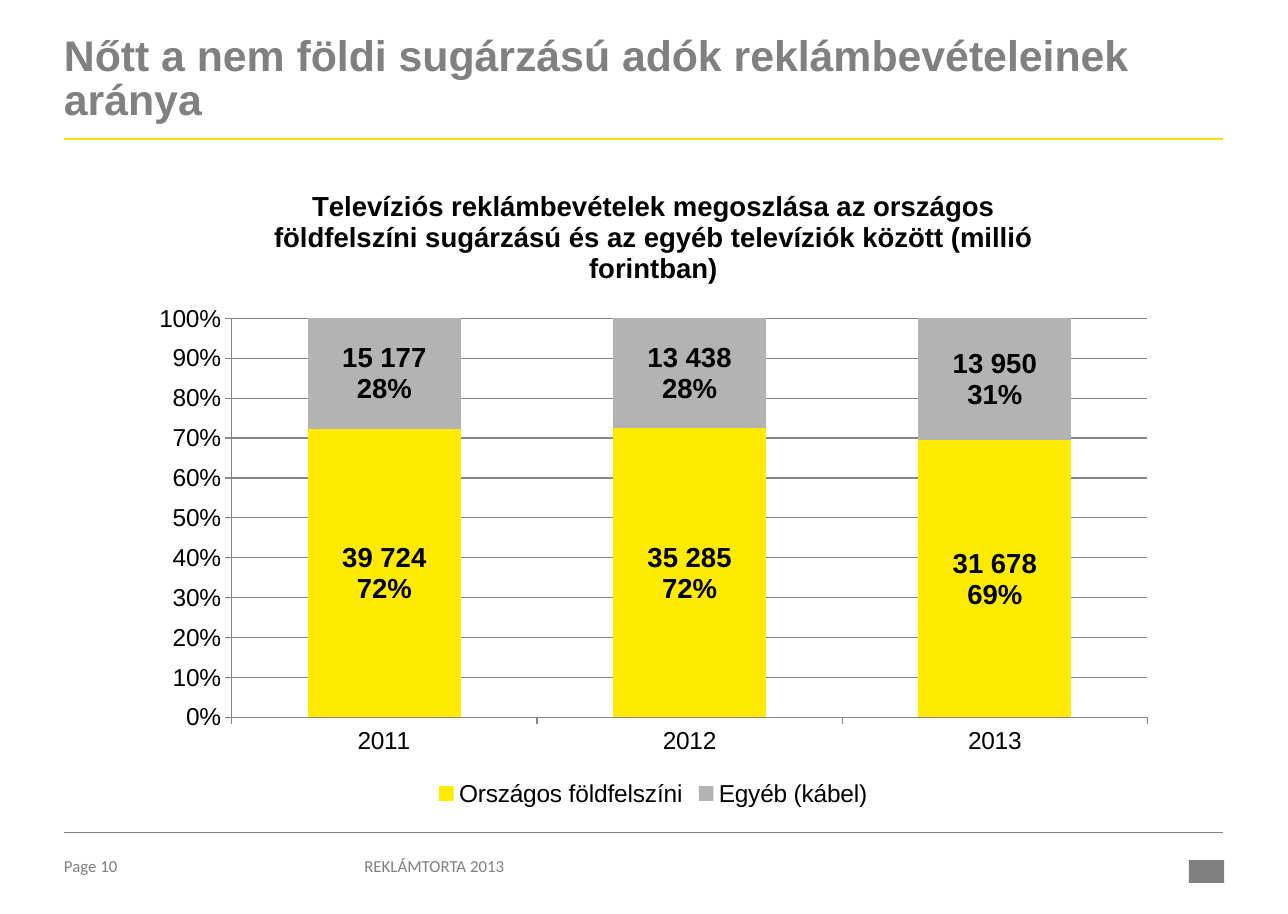
from lxml import etree
from pptx import Presentation
from pptx.chart.data import CategoryChartData
from pptx.dml.color import RGBColor
from pptx.enum.chart import XL_CHART_TYPE, XL_LABEL_POSITION, XL_LEGEND_POSITION, XL_TICK_MARK
from pptx.enum.shapes import MSO_CONNECTOR, MSO_SHAPE
from pptx.oxml.ns import qn
from pptx.util import Pt

STACKED = XL_CHART_TYPE.COLUMN_STACKED_100
CENTER = XL_LABEL_POSITION.CENTER
BOTTOM = XL_LEGEND_POSITION.BOTTOM
OUTSIDE = XL_TICK_MARK.OUTSIDE
STRAIGHT = MSO_CONNECTOR.STRAIGHT
RECTANGLE = MSO_SHAPE.RECTANGLE

COLORS = {"gray": "808080", "rule": "FFE600", "terrestrial": "FFEB00",
          "other": "B3B3B3", "grid": "868686", "black": "000000"}
LEFT, RIGHT = 41.8, 800
YEARS = ["2011", "2012", "2013"]
REVENUES = {
    "Országos földfelszíni": ("terrestrial", [39724, 35285, 31678]),
    "Egyéb (kábel)": ("other", [15177, 13438, 13950]),
}
CHART_TITLE = ("Televíziós reklámbevételek megoszlása az országos földfelszíni "
               "sugárzású és az egyéb televíziók között (millió forintban)")


def color(name):
    """Return the named colour."""
    return RGBColor.from_string(COLORS[name])


def style_font(font, size, name="Arial", ink="black", bold=False):
    """Set the face, size, colour and weight of a font."""
    font.name, font.size, font.bold = name, Pt(size), bold
    font.color.rgb = color(ink)


def add_span(para, text, size, **style):
    """Append one styled run to a paragraph."""
    span = para.add_run()
    span.text = text
    style_font(span.font, size, **style)


def add_text(page, place, text, size, spacing=None, **style):
    """Add a text box without margins."""
    box = page.shapes.add_textbox(*map(Pt, place))
    frame = box.text_frame
    frame.word_wrap = True
    frame.margin_left = frame.margin_right = frame.margin_top = frame.margin_bottom = 0
    para = frame.paragraphs[0]
    para.line_spacing = spacing
    add_span(para, text, size, ink="gray", **style)


def add_rule(page, top, ink, width):
    """Draw a horizontal rule between the page margins."""
    rule = page.shapes.add_connector(STRAIGHT, Pt(LEFT), Pt(top), Pt(RIGHT), Pt(top))
    rule.line.color.rgb = color(ink)
    rule.line.width = Pt(width)
    etree.SubElement(rule.element.spPr, qn("a:effectLst"))


def add_emblem(page, place):
    """Add the plain block in the footer corner."""
    block = page.shapes.add_shape(RECTANGLE, *map(Pt, place))
    block.shadow.inherit = False
    block.fill.solid()
    block.fill.fore_color.rgb = color("gray")
    block.line.fill.background()


def style_axis(axis):
    """Set the line, ticks and labels of an axis."""
    axis.major_tick_mark = OUTSIDE
    axis.format.line.color.rgb = color("grid")
    axis.format.line.width = Pt(0.75)
    style_font(axis.tick_labels.font, 16)


def label_points(series, values, totals):
    """Label each column part with its amount and its share."""
    labels = series.data_labels
    labels.show_value = True
    labels.position = CENTER
    style_font(labels.font, 18, bold=True)
    for index, (value, total) in enumerate(zip(values, totals)):
        label = series.points[index].data_label
        frame = label.text_frame
        amount = f"{value:,}".replace(",", " ")
        add_span(frame.paragraphs[0], amount, 18, bold=True)
        add_span(frame.add_paragraph(), f"{value / total:.0%}", 18, bold=True)
        label.position = CENTER


def add_revenue_chart(page, place):
    """Add the stacked chart of television advertising revenues."""
    data = CategoryChartData(number_format="#,##0")
    data.categories = YEARS
    for name, (_, values) in REVENUES.items():
        data.add_series(name, values)
    chart = page.shapes.add_chart(STACKED, *map(Pt, place), data).chart
    style_font(chart.font, 18)
    chart.has_title = True
    add_span(chart.chart_title.text_frame.paragraphs[0], CHART_TITLE, 18, bold=True)
    chart.has_legend = True
    chart.legend.position = BOTTOM
    chart.legend.include_in_layout = False
    style_font(chart.legend.font, 16)

    style_axis(chart.category_axis)
    axis = chart.value_axis
    style_axis(axis)
    axis.maximum_scale, axis.major_unit = 1, 0.1
    axis.tick_labels.number_format = "0%"
    axis.tick_labels.number_format_is_linked = False
    axis.major_gridlines.format.line.color.rgb = color("grid")
    axis.major_gridlines.format.line.width = Pt(0.75)

    plot = chart.plots[0]
    plot.gap_width, plot.overlap = 100, 100
    plot.vary_by_categories = False
    totals = [sum(column) for column in zip(*(values for _, values in REVENUES.values()))]
    for series, (ink, values) in zip(plot.series, REVENUES.values()):
        series.format.fill.solid()
        series.format.fill.fore_color.rgb = color(ink)
        label_points(series, values, totals)


def main():
    """Build the slide and save it."""
    deck = Presentation()
    deck.slide_width, deck.slide_height = Pt(842.4), Pt(597.6)
    page = deck.slides.add_slide(deck.slide_layouts[6])
    add_rule(page, 90.7, "rule", 1.5)
    add_rule(page, 544.3, "gray", 0.25)
    add_text(page, (LEFT, 23.8, RIGHT - LEFT, 67.7),
             "Nőtt a nem földi sugárzású adók reklámbevételeinek aránya",
             28, spacing=0.85, bold=True)
    add_revenue_chart(page, (90.7, 107.3, 673.2, 423.4))
    add_text(page, (LEFT, 559.4, 61.2, 17.3), "Page 10", 11, name="Calibri")
    add_text(page, (238.3, 559.4, 316, 17.3), "REKLÁMTORTA 2013", 11, name="Calibri")
    add_emblem(page, (777.6, 562.3, 23, 15))
    deck.save("out.pptx")


if __name__ == "__main__":
    main()
